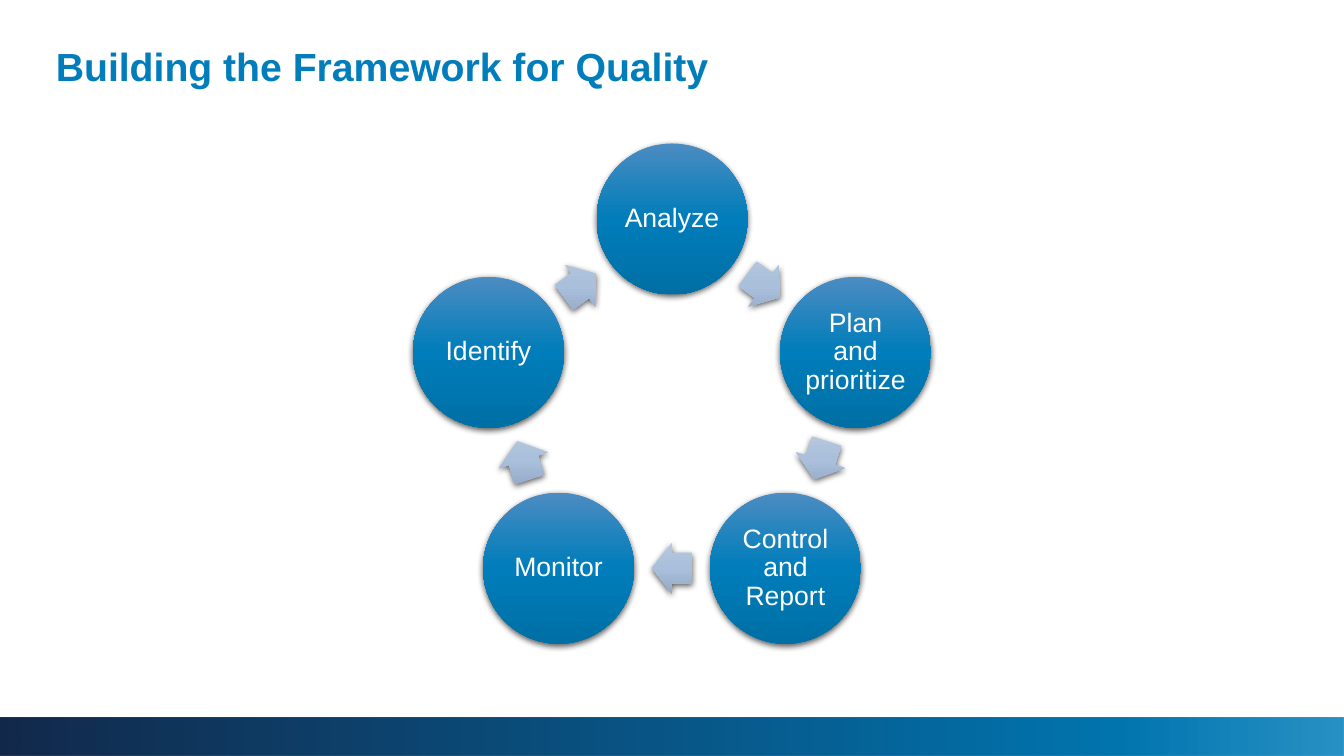
from math import cos, radians, sin
from lxml.etree import SubElement
from pptx import Presentation
from pptx.dml.color import RGBColor
from pptx.enum.shapes import MSO_SHAPE
from pptx.enum.text import MSO_ANCHOR, PP_ALIGN
from pptx.oxml.ns import qn
from pptx.util import Pt

PX = 914400 / 100.8
BLUE = [(0, "4B8CC2", 100), (50, "007DBA", 100), (100, "006FA5", 100)]
PALE = [(0, "B6C8DE", 100), (50, "A9BFDB", 100), (100, "93A9C6", 100)]
BAND = [(0, "13294B", 100), (83, "0275AF", 100), (100, "007DBA", 84)]


def draw(kind, box, stops, angle, shade=True):
    shape = slide.shapes.add_shape(kind, *[round(n * PX) for n in box])
    shape.line.fill.background()
    shape.shadow.inherit = False
    shape.fill.gradient()
    shape.fill.gradient_angle = angle
    props = shape.element.spPr
    grad = props.find(qn("a:gradFill"))
    grad.set("rotWithShape", "0")
    ramp = grad.find(qn("a:gsLst"))
    ramp.clear()
    for pos, tint, alpha in stops:
        stop = SubElement(ramp, qn("a:gs"), pos=str(pos * 1000))
        color = SubElement(stop, qn("a:srgbClr"), val=tint)
        SubElement(color, qn("a:alpha"), val=str(alpha * 1000))
    if shade:
        glow = SubElement(props.find(qn("a:effectLst")), qn("a:outerShdw"),
                          blurRad=str(Pt(4.5)), dist=str(Pt(1.5)),
                          dir="5400000", rotWithShape="0")
        color = SubElement(glow, qn("a:srgbClr"), val="000000")
        SubElement(color, qn("a:alpha"), val="63000")
    return shape


def write(shape, text, size, tint, align, bold=False):
    frame = shape.text_frame
    frame.word_wrap = True
    frame.vertical_anchor = MSO_ANCHOR.MIDDLE
    para = frame.paragraphs[0]
    para.alignment = align
    para.line_spacing = 0.9
    run = para.add_run()
    run.text = text
    run.font.name = "Arial"
    run.font.size = Pt(size)
    run.font.bold = bold
    run.font.color.rgb = RGBColor.from_string(tint)
    return frame


deck = Presentation()
deck.slide_width = round(1344 * PX)
deck.slide_height = round(756 * PX)
slide = deck.slides.add_slide(deck.slide_layouts[6])

draw(MSO_SHAPE.RECTANGLE, (0, 718, 1344, 38), BAND, 0, False)
title = slide.shapes.add_textbox(*[round(n * PX) for n in (46, 42, 1252, 54)])
write(title, "Building the Framework for Quality", 28, "007DBA", PP_ALIGN.LEFT, True)

MID_X, MID_Y, RADIUS = 672, 412, 193
DISC, LONG, WIDE = 151, 40, 51
steps = ["Analyze", "Plan and prioritize", "Control and Report", "Monitor", "Identify"]
turn = 360 / len(steps)
reach = RADIUS * cos(radians(turn / 2))

for i, step in enumerate(steps):
    angle = radians(i * turn)
    x = MID_X + RADIUS * sin(angle)
    y = MID_Y - RADIUS * cos(angle)
    disc = draw(MSO_SHAPE.OVAL, (x - DISC / 2, y - DISC / 2, DISC, DISC), BLUE, 270)
    frame = write(disc, step, 19, "FFFFFF", PP_ALIGN.CENTER)
    frame.margin_left = frame.margin_right = round(2 * PX)
    frame.margin_top = frame.margin_bottom = round(2 * PX)

    tilt = (i + 0.5) * turn
    x = MID_X + reach * sin(radians(tilt))
    y = MID_Y - reach * cos(radians(tilt))
    arrow = draw(MSO_SHAPE.RIGHT_ARROW, (x - LONG / 2, y - WIDE / 2, LONG, WIDE), PALE, 270)
    arrow.adjustments[0] = 0.6
    arrow.adjustments[1] = 0.5
    arrow.rotation = tilt

deck.save("out.pptx")
